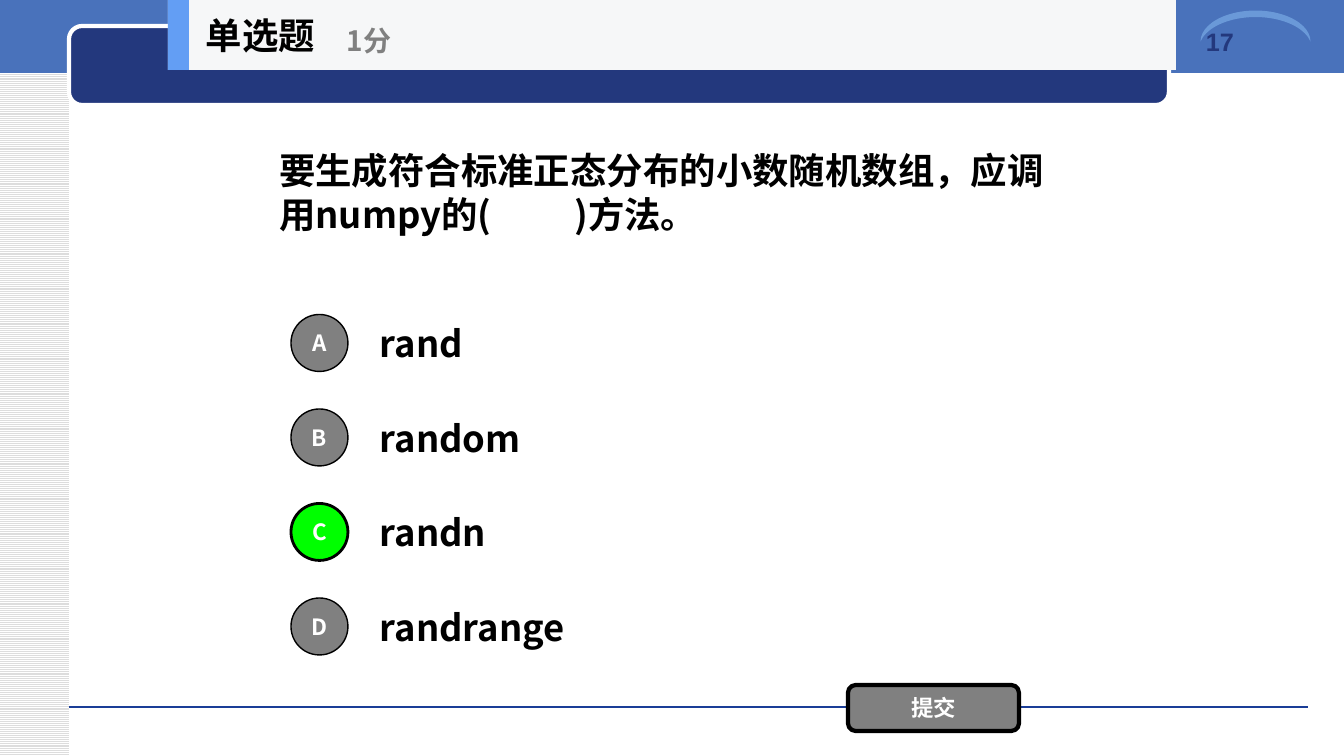
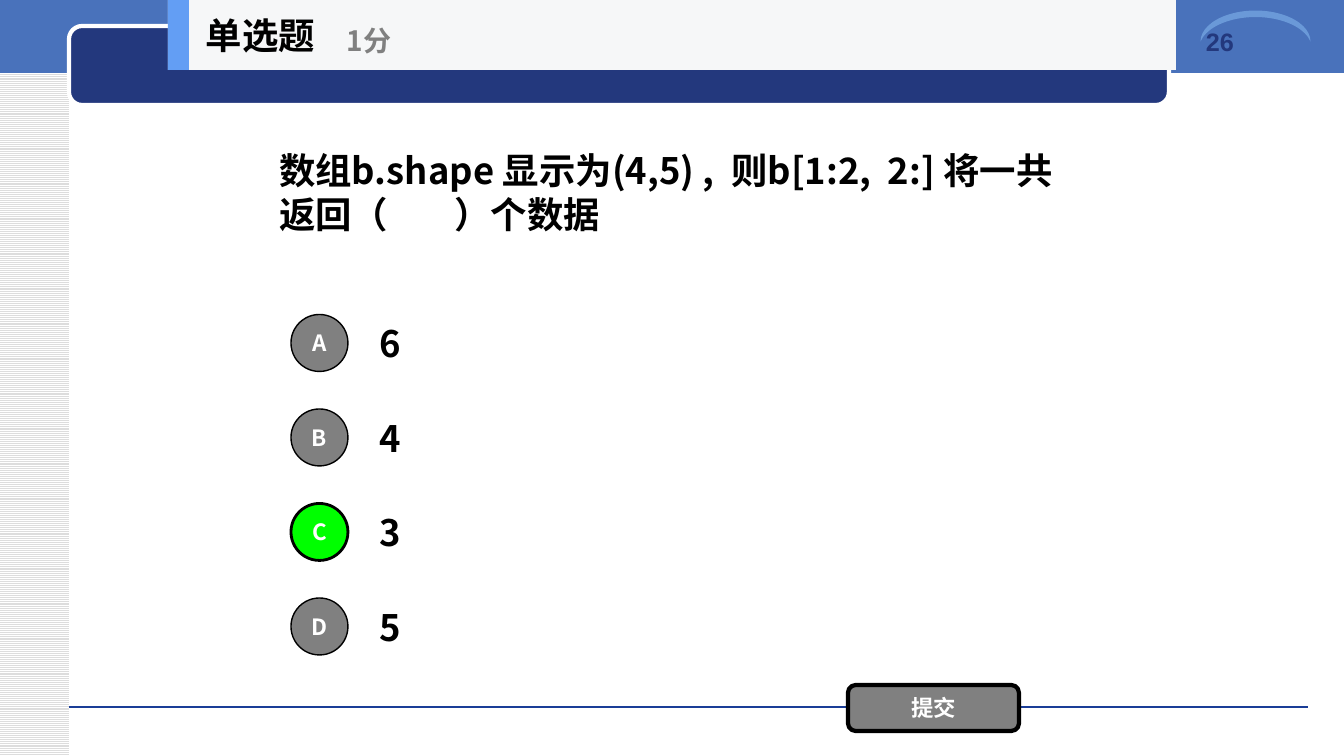
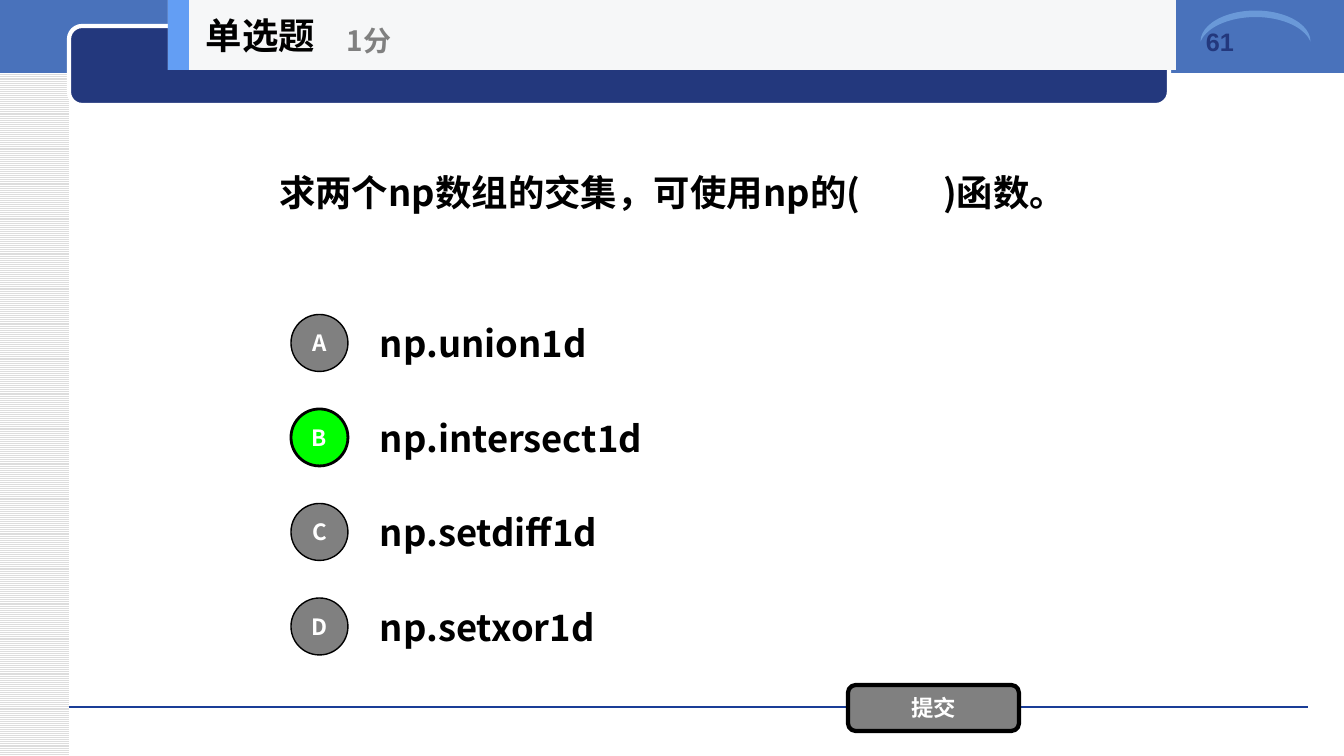
from pptx import Presentation
from pptx import util as u
from pptx.dml.color import RGBColor
from pptx.enum import dml, shapes, text
from pptx.oxml.ns import qn
from lxml import etree

# Content: page number, question, options, index of the right option
QUESTIONS = [
    ("17", "要生成符合标准正态分布的小数随机数组，应调用numpy的(          )方法。",
     ["rand", "random", "randn", "randrange"], 2),
    ("26", "数组b.shape 显示为(4,5) ,  则b[1:2,  2:] 将一共返回（        ）个数据",
     ["6", "4", "3", "5"], 2),
    ("61", "求两个np数组的交集，可使用np的(          )函数。",
     ["np.union1d", "np.intersect1d", "np.setdiff1d", "np.setxor1d"], 1),
]
QUESTION_TYPE, SCORE, SUBMIT = "单选题", "1分", "提交"

# Shared style
FONT, NUMBER_FONT = "Noto Sans CJK SC", "Arial"
BLACK, WHITE, GREY, GREEN = "000000", "FFFFFF", "808080", "00FF00"
NAVY, BLUE, SKY, ACCENT = "23387D", "4972BB", "6A99D8", "639EF4"
RULE, STRIPE, PALE = "1A3D97", "DDDDDD", "F6F7F8"
SHAPE = shapes.MSO_SHAPE
ALIGN = text.PP_ALIGN
ANCHOR = text.MSO_ANCHOR

# Layout in px
WIDTH, HEIGHT = 1344, 756
SCALE = 12192000 / WIDTH
MARGIN = 69
OPTION_CENTER, OPTION_STEP, OPTION_HEIGHT = 343, 94.5, 70
BADGE = 57


def px(length):
    return u.Emu(round(length * SCALE))


def color(value):
    return RGBColor.from_string(value)


def box(left, top, width, height):
    return [px(length) for length in (left, top, width, height)]


def write(shape, words, size, ink, align=ALIGN.LEFT, anchor=ANCHOR.MIDDLE, font=FONT):
    frame = shape.text_frame
    frame.text = words
    frame.word_wrap = True
    frame.auto_size = text.MSO_AUTO_SIZE.NONE
    frame.vertical_anchor = anchor
    paragraph = frame.paragraphs[0]
    paragraph.alignment = align
    run = paragraph.runs[0]
    run.font.size = u.Pt(size)
    run.font.bold = True
    run.font.name = font
    run.font.color.rgb = color(ink)
    east_asian = etree.SubElement(run.font._element, qn("a:ea"))
    east_asian.set("typeface", font)
    return paragraph


def add_label(slide, area, words, size, ink, **style):
    write(slide.shapes.add_textbox(*box(*area)), words, size, ink, **style)


def add_block(slide, kind, area, fill, line=None, weight=1):
    shape = slide.shapes.add_shape(kind, *box(*area))
    shape.shadow.inherit = False
    shape.fill.solid()
    shape.fill.fore_color.rgb = color(fill)
    if line:
        shape.line.color.rgb = color(line)
        shape.line.width = u.Pt(weight)
    else:
        shape.line.fill.background()
    return shape


def add_button(slide, kind, area, words, fill, weight):
    button = add_block(slide, kind, area, fill, BLACK, weight)
    frame = button.text_frame
    frame.margin_left = frame.margin_right = frame.margin_top = frame.margin_bottom = 0
    write(button, words, 16, WHITE, ALIGN.CENTER)


def add_frame(slide, number):
    # Striped side strip
    strip = add_block(slide, SHAPE.RECTANGLE, (0, 0, MARGIN, HEIGHT), WHITE)
    strip.fill.patterned()
    strip.fill.pattern = dml.MSO_PATTERN.LIGHT_HORIZONTAL
    strip.fill.fore_color.rgb = color(STRIPE)
    strip.fill.back_color.rgb = color(WHITE)

    # Top band, footer rule, title bar and crescent
    add_block(slide, SHAPE.RECTANGLE, (0, -3, WIDTH, 76), BLUE)
    rule = slide.shapes.add_connector(
        shapes.MSO_CONNECTOR.STRAIGHT, px(MARGIN), px(707), px(1308), px(707))
    rule.line.color.rgb = color(RULE)
    rule.line.width = u.Pt(0.75)
    etree.SubElement(rule._element.spPr, qn("a:effectLst"))
    add_block(slide, SHAPE.ROUNDED_RECTANGLE, (MARGIN, 26, 1100, 79), NAVY, WHITE, 3)
    crescent = add_block(slide, SHAPE.MOON, (1240, -29, 31, 110), SKY)
    crescent.adjustments[0] = 0.21
    crescent.rotation = 90

    # Page number
    add_label(slide, (1196, 21, 122, 72), number, 18, NAVY,
              anchor=ANCHOR.TOP, font=NUMBER_FONT)


def add_header(slide):
    add_block(slide, SHAPE.RECTANGLE, (168, 0, 1008, 70), PALE)
    add_block(slide, SHAPE.RECTANGLE, (168, 0, 21, 70), ACCENT)
    add_label(slide, (196, 0, 210, 70), QUESTION_TYPE, 26, BLACK)
    add_label(slide, (337, 12, 252, 56), SCORE, 20, GREY)


def add_options(slide, options, answer):
    for index, option in enumerate(options):
        center = OPTION_CENTER + index * OPTION_STEP
        add_label(slide, (370, center - OPTION_HEIGHT / 2, 706, OPTION_HEIGHT),
                  option, 26, BLACK)
        fill, weight = (GREEN, 2) if index == answer else (GREY, 1)
        add_button(slide, SHAPE.OVAL, (291, center - BADGE / 2, BADGE, BADGE),
                   "ABCD"[index], fill, weight)


def add_question(presentation, number, question, options, answer):
    slide = presentation.slides.add_slide(presentation.slide_layouts[5])
    add_frame(slide, number)
    title = slide.shapes.title
    title.left, title.top, title.width, title.height = box(269, 74, 806, 236)
    write(title, question, 26, BLACK).line_spacing = u.Pt(31.5)
    add_options(slide, options, answer)
    add_button(slide, SHAPE.ROUNDED_RECTANGLE, (848, 685, 171, 46), SUBMIT, GREY, 3)
    add_header(slide)


def main():
    presentation = Presentation()
    presentation.slide_width, presentation.slide_height = px(WIDTH), px(HEIGHT)
    for question in QUESTIONS:
        add_question(presentation, *question)
    presentation.save("out.pptx")


if __name__ == "__main__":
    main()
